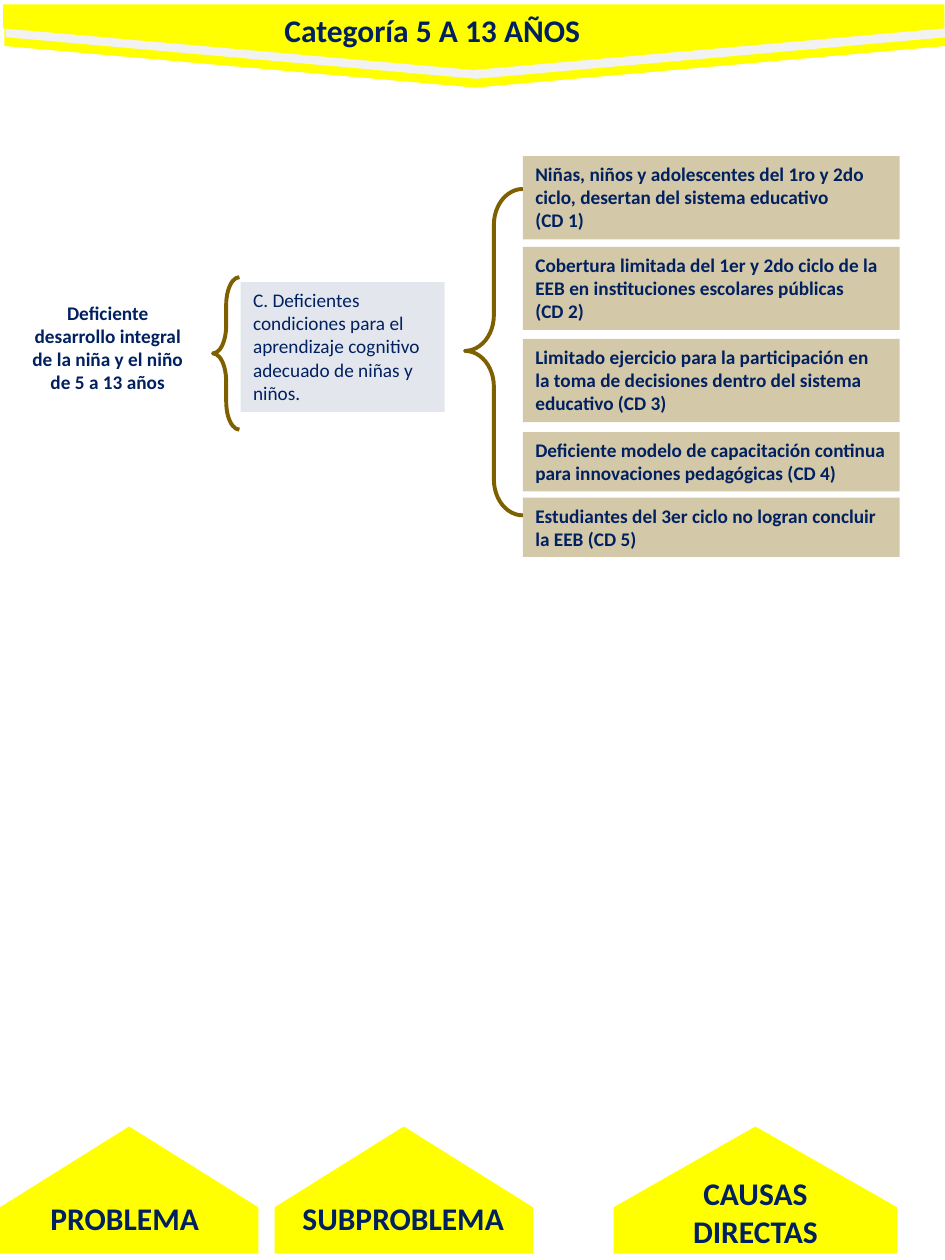
from dataclasses import dataclass

from lxml import etree
from pptx import Presentation
from pptx.dml.color import RGBColor
from pptx.enum.shapes import MSO_SHAPE
from pptx.enum.text import MSO_ANCHOR, PP_ALIGN
from pptx.oxml.ns import qn
from pptx.util import Inches, Pt

RECTANGLE = MSO_SHAPE.RECTANGLE
ARROW = MSO_SHAPE.RIGHT_ARROW
BRACE = MSO_SHAPE.LEFT_BRACE
TOP = MSO_ANCHOR.TOP
LEFT = PP_ALIGN.LEFT
CENTER = PP_ALIGN.CENTER


@dataclass(frozen=True)
class Theme:
    """Colours, font and type sizes of the slide."""
    navy: RGBColor = RGBColor(0x00, 0x20, 0x60)
    brown: RGBColor = RGBColor(0x7F, 0x60, 0x00)
    yellow: RGBColor = RGBColor(0xFF, 0xFF, 0x00)
    grey: RGBColor = RGBColor(0xF2, 0xF2, 0xF2)
    font: str = "Calibri"
    body: Pt = Pt(11)
    heading: Pt = Pt(18)
    brace: Pt = Pt(2.25)


THEME = Theme()

CAUSES = [
    (1.24, 0.66, ["Niñas, niños y adolescentes del 1ro y 2do ciclo, "
                  "desertan del sistema educativo", "(CD 1)"]),
    (1.96, 0.66, ["Cobertura limitada del 1er y 2do ciclo de la EEB en "
                  "instituciones escolares públicas", "(CD 2)"]),
    (2.69, 0.66, ["Limitado ejercicio para la participación en la toma de "
                  "decisiones dentro del sistema educativo (CD 3)"]),
    (3.43, 0.47, ["Deficiente modelo de capacitación continua para "
                  "innovaciones pedagógicas (CD 4)"]),
    (3.95, 0.47, ["Estudiantes del 3er ciclo no logran concluir la EEB (CD 5)"]),
]


def write(frame, lines, size, bold=True, align=LEFT):
    """Fill a text frame with equally styled paragraphs."""
    frame.word_wrap = True
    frame.vertical_anchor = TOP
    for index, line in enumerate(lines):
        paragraph = frame.add_paragraph() if index else frame.paragraphs[0]
        paragraph.text = line
        paragraph.alignment = align
        paragraph.font.name = THEME.font
        paragraph.font.size = size
        paragraph.font.bold = bold
        paragraph.font.color.rgb = THEME.navy


def add_label(slide, box, text, size, align=CENTER):
    """Add bold text without a background."""
    label = slide.shapes.add_textbox(*map(Inches, box))
    write(label.text_frame, [text], size, align=align)


def add_plain_shape(slide, kind, box, fill=None):
    """Add a preset shape without outline or shadow."""
    shape = slide.shapes.add_shape(kind, *map(Inches, box))
    shape.shadow.inherit = False
    shape.line.fill.background()
    if fill is None:
        shape.fill.background()
    else:
        shape.fill.solid()
        shape.fill.fore_color.rgb = fill
    return shape


def add_card(slide, box, lines, fill, opacity, bold=True):
    """Add a translucent rectangle holding text."""
    card = add_plain_shape(slide, RECTANGLE, box, fill)
    colour = card.fill._xPr.find(".//" + qn("a:srgbClr"))
    etree.SubElement(colour, qn("a:alpha"), val=str(opacity * 1000))
    write(card.text_frame, lines, THEME.body, bold)


def add_arrow(slide, box, rotation, fill):
    """Add a turned pentagon-like arrow."""
    arrow = add_plain_shape(slide, ARROW, box, fill)
    arrow.rotation = rotation
    arrow.adjustments[0] = 1
    arrow.adjustments[1] = 0.635


def add_brace(slide, box, curve, middle):
    """Add a left brace that groups what stands to its right."""
    brace = add_plain_shape(slide, BRACE, box)
    brace.adjustments[0] = curve
    brace.adjustments[1] = middle
    brace.line.color.rgb = THEME.brown
    brace.line.width = THEME.brace


def add_banner(slide):
    """Add the layered chevron banner and its title."""
    layers = [(3.51, -3.3, THEME.yellow), (3.52, -3.37, THEME.grey),
              (3.5, -3.44, THEME.yellow)]
    for left, top, fill in layers:
        add_arrow(slide, (left, top, 0.52, 7.47), 90, fill)
    add_label(slide, (2.16, 0.04, 3.17, 0.4), "Categoría 5 A 13 AÑOS",
              THEME.heading, LEFT)


def add_tree(slide):
    """Add the problem, its subproblem and the direct causes."""
    add_label(slide, (0.1, 2.34, 1.51, 0.84),
              "Deficiente desarrollo integral de la niña y el niño "
              "de 5 a 13 años", THEME.body)
    add_card(slide, (1.91, 2.24, 1.62, 1.03),
             ["C. Deficientes condiciones para el aprendizaje cognitivo "
              "adecuado de niñas y niños."], THEME.navy, 11, bold=False)
    for top, height, lines in CAUSES:
        add_card(slide, (4.15, top, 2.99, height), lines, THEME.brown, 34)
    add_brace(slide, (1.69, 2.2, 0.21, 1.21), 1.058, 0.5)
    add_brace(slide, (3.69, 1.5, 0.46, 2.59), 0.619, 0.496)


def add_column_names(slide):
    """Add the arrows that name the columns of the tree."""
    columns = [
        ((0.52, 8.42, 1.01, 2.05), (0.14, 9.47, 1.7, 0.4), "PROBLEMA"),
        ((2.7, 8.42, 1.01, 2.05), (2.24, 9.47, 1.92, 0.4), "SUBPROBLEMA"),
        ((5.49, 8.32, 1.01, 2.25), (5.27, 9.27, 1.45, 0.71), "CAUSAS DIRECTAS"),
    ]
    for arrow_box, name_box, name in columns:
        add_arrow(slide, arrow_box, 270, THEME.yellow)
        add_label(slide, name_box, name, THEME.heading)


def main():
    """Build and save the slide."""
    presentation = Presentation()
    presentation.slide_width = Inches(7.5)
    presentation.slide_height = Inches(10)
    slide = presentation.slides.add_slide(presentation.slide_layouts[6])
    add_banner(slide)
    add_tree(slide)
    add_column_names(slide)
    presentation.save("out.pptx")


if __name__ == "__main__":
    main()
